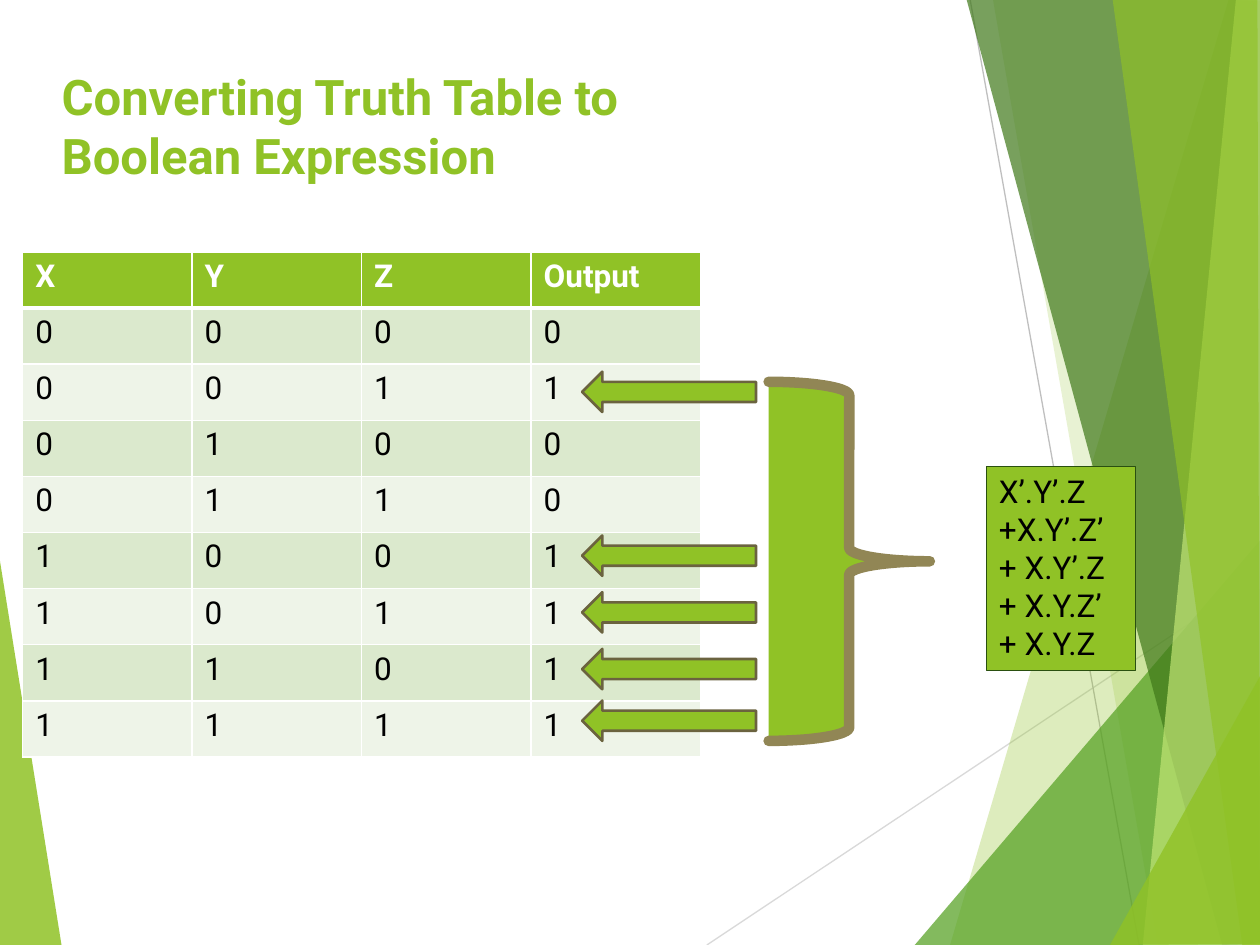
from lxml.etree import SubElement
from pptx import Presentation
from pptx.dml.color import RGBColor
from pptx.enum.shapes import MSO_CONNECTOR, MSO_SHAPE
from pptx.enum.text import MSO_ANCHOR, MSO_AUTO_SIZE, PP_ALIGN
from pptx.oxml.ns import qn
from pptx.util import Inches, Pt

HUES = {
    "lime": "90C226", "green": "54A021", "dark": "3F7819", "pale": "C0E474",
    "white": "FFFFFF", "black": "000000", "band": "DBE9CD", "light": "EEF4E8",
    "olive": "6B633F", "khaki": "918655", "edge": "2A5010",
    "silver": "D9D9D9", "gray": "BFBFBF",
}
TITLE = {"size": Pt(28), "bold": True, "name": "Roboto"}
HEAD = {"size": Pt(18), "bold": True, "name": "Roboto"}
BODY = {"size": Pt(18), "bold": False, "name": "Roboto"}


def paint(shape, fill, line=None, width=0, alpha=100):
    shape.shadow.inherit = False
    shape.fill.solid()
    shape.fill.fore_color.rgb = RGBColor.from_string(HUES[fill])
    if alpha < 100:
        tint = shape.fill._xPr.find(qn("a:solidFill"))[0]
        SubElement(tint, qn("a:alpha"), val=str(alpha * 1000))
    if line:
        shape.line.color.rgb = RGBColor.from_string(HUES[line])
        shape.line.width = Pt(width)
    else:
        shape.line.fill.background()


def write(frame, text, style, hue):
    para = frame.paragraphs[0]
    para.alignment = PP_ALIGN.LEFT
    run = para.add_run()
    run.text = text
    for key, val in style.items():
        setattr(run.font, key, val)
    run.font.color.rgb = RGBColor.from_string(HUES[hue])


deck = Presentation()
deck.slide_width, deck.slide_height = Inches(10), Inches(7.5)
slide = deck.slides.add_slide(deck.slide_layouts[6])
shapes = slide.shapes

facets = [
    ("lime", 85, [(-0.01, 4.39), (0.49, 7.51), (-0.01, 7.5)]),
    ("lime", 30, [(9.75, 0), (7.54, 7.5), (10.02, 7.51), (10.01, 0.01)]),
    ("lime", 20, [(7.88, -0.01), (9.19, 7.5), (10.01, 7.5), (10.01, -0.01)]),
    ("green", 72, [(7.26, 7.5), (10, 4.29), (10.01, 7.5)]),
    ("dark", 70, [(7.67, -0.01), (9.7, 7.5), (10.01, 7.49), (10.01, -0.01)]),
    ("pale", 70, [(9.81, -0.01), (9.07, 7.5), (10.01, 7.5), (10, -0.01)]),
    ("lime", 65, [(8.83, -0.01), (9.86, 7.5), (10, 7.5), (9.98, -0.01)]),
    ("lime", 80, [(8.81, 7.5), (10.01, 5.35), (10.01, 7.49)]),
]
rays = [("silver", 5.61, 7.5, 10.01, 4.57), ("gray", 7.7, 0, 9.04, 7.5)]

for num, (hue, alpha, pts) in enumerate(facets):
    pen = shapes.build_freeform(Inches(pts[0][0]), Inches(pts[0][1]))
    pen.add_line_segments([(Inches(x), Inches(y)) for x, y in pts[1:]])
    paint(pen.convert_to_shape(), hue, alpha=alpha)
    if num == 0:
        for tone, *ends in rays:
            ray = shapes.add_connector(MSO_CONNECTOR.STRAIGHT, *map(Inches, ends))
            ray.line.color.rgb = RGBColor.from_string(HUES[tone])
            ray.line.width = Pt(0.75)
            SubElement(ray._element.spPr, qn("a:effectLst"))

title = shapes.add_textbox(Inches(0.39), Inches(0.48), Inches(5.62), Inches(1.44))
title.text_frame.word_wrap = True
write(title.text_frame, "Converting Truth Table to Boolean Expression", TITLE, "lime")

ones = {1, 4, 5, 6, 7}
rows = [["X", "Y", "Z", "Output"]]
for num in range(8):
    rows.append([*f"{num:03b}", str(int(num in ones))])

table = shapes.add_table(
    len(rows), 4, Inches(0.18), Inches(2), Inches(5.38), Inches(4.01)
).table
for row, texts in enumerate(rows):
    for col, text in enumerate(texts):
        cell = table.cell(row, col)
        cell.fill.solid()
        fill = "lime" if row == 0 else "band" if row % 2 else "light"
        cell.fill.fore_color.rgb = RGBColor.from_string(HUES[fill])
        style, hue = (BODY, "black") if row else (HEAD, "white")
        write(cell.text_frame, text, style, hue)
        props = cell._tc.get_or_add_tcPr()
        for spot, side in enumerate(("lnL", "lnR", "lnT", "lnB")):
            thick = (row, side) in ((0, "lnB"), (1, "lnT"))
            rule = SubElement(props, qn(f"a:{side}"), w=str(Pt(3 if thick else 1)))
            ink = SubElement(rule, qn("a:solidFill"))
            SubElement(ink, qn("a:srgbClr"), val=HUES["white"])
            props.insert(spot, rule)

for top in (2.95, 4.25, 4.7, 5.15, 5.56):
    arrow = shapes.add_shape(
        MSO_SHAPE.RIGHT_ARROW, Inches(4.62), Inches(top), Inches(1.38), Inches(0.32)
    )
    arrow.rotation = 180
    paint(arrow, "lime", "olive", 1.5)

brace = shapes.add_shape(
    MSO_SHAPE.RIGHT_BRACE, Inches(6.1), Inches(3.03), Inches(1.28), Inches(2.85)
)
paint(brace, "lime", "khaki", 6)
stroke = brace._element.spPr.find(qn("a:ln"))
stroke.set("cap", "rnd")
SubElement(stroke, qn("a:round"))

box = shapes.add_shape(
    MSO_SHAPE.RECTANGLE, Inches(7.83), Inches(3.7), Inches(1.18), Inches(1.62)
)
paint(box, "lime", "edge", 0.75)
layout = {
    "word_wrap": True,
    "auto_size": MSO_AUTO_SIZE.SHAPE_TO_FIT_TEXT,
    "vertical_anchor": MSO_ANCHOR.TOP,
}
for key, val in layout.items():
    setattr(box.text_frame, key, val)
write(box.text_frame, "X’.Y’.Z +X.Y’.Z’ + X.Y’.Z + X.Y.Z’ + X.Y.Z", BODY, "black")

deck.save("out.pptx")
